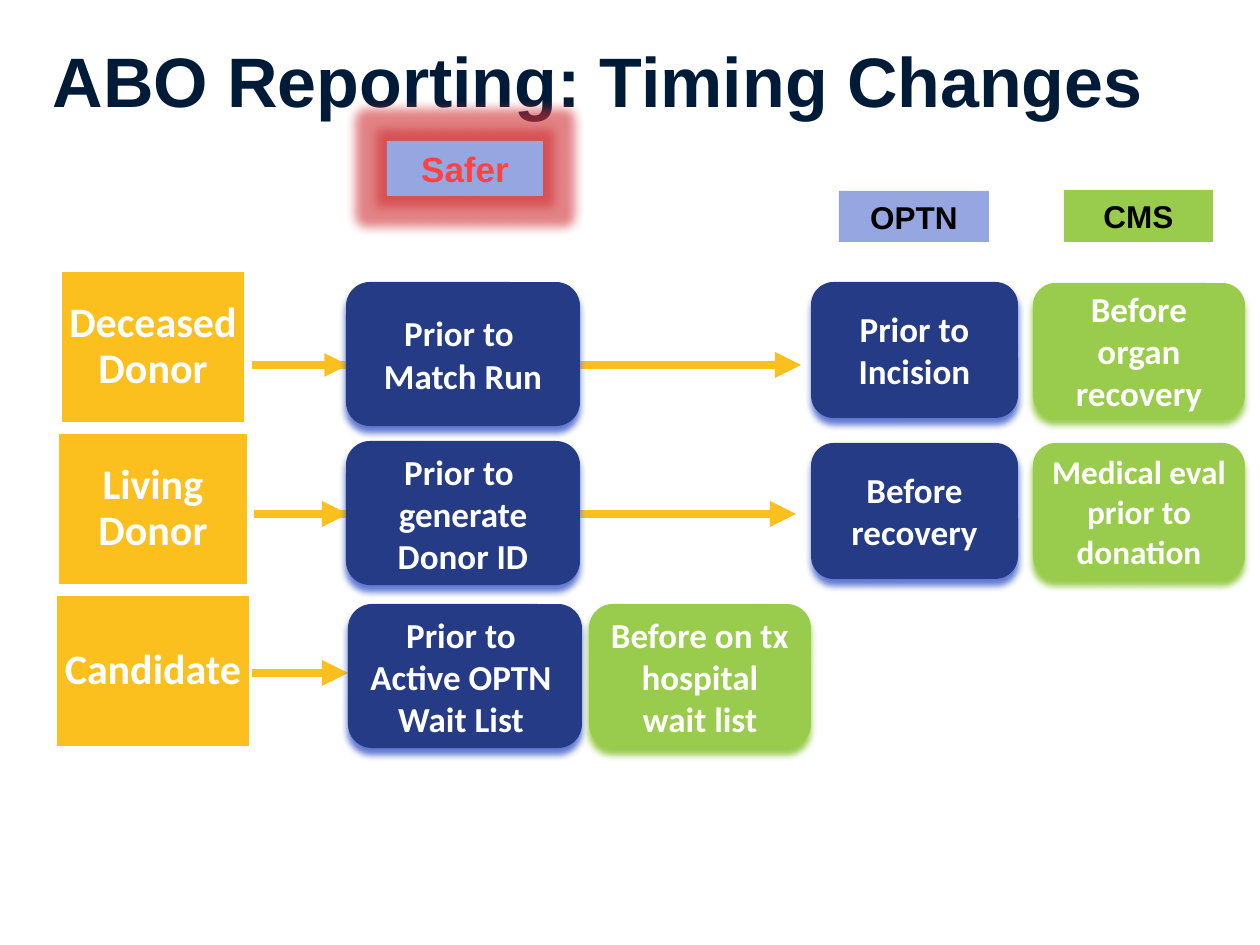
from lxml.etree import SubElement
from pptx import Presentation
from pptx.dml.color import RGBColor
from pptx.enum.shapes import MSO_CONNECTOR, MSO_SHAPE
from pptx.enum.text import MSO_ANCHOR, PP_ALIGN
from pptx.oxml.ns import qn
from pptx.util import Pt

SCALE = 914400 / 126  # EMU in one px
NAVY = RGBColor(0x00, 0x1B, 0x37)
BLUE = RGBColor(0x26, 0x3B, 0x86)
BLUE_SHADOW = RGBColor(0x61, 0x7A, 0xD2)
LIGHT_BLUE = RGBColor(0x96, 0xA6, 0xE1)
GREEN = RGBColor(0x99, 0xCC, 0x4C)
GOLD = RGBColor(0xFB, 0xC0, 0x1E)
RED = RGBColor(0xFD, 0x42, 0x44)
GLOW_RED = RGBColor(0xD0, 0x30, 0x34)
WHITE = RGBColor(0xFF, 0xFF, 0xFF)
BLACK = RGBColor(0x00, 0x00, 0x00)

ROW_TOP, ROW_PITCH = 270, 162
LABEL_CENTER, LABEL_HEIGHT = 153, 154


def px(length):
    return round(length * SCALE)


def write_text(shape, text, size, color, font="Calibri", align=PP_ALIGN.CENTER,
               line_spacing=None, inset=None):
    frame = shape.text_frame
    frame.word_wrap = True
    frame.vertical_anchor = MSO_ANCHOR.MIDDLE
    if inset is not None:
        frame.margin_left = frame.margin_right = px(inset)
    frame.text = text
    for paragraph in frame.paragraphs:
        paragraph.alignment = align
        paragraph.line_spacing = line_spacing
        paragraph.font.name = font
        paragraph.font.size = Pt(size)
        paragraph.font.bold = True
        paragraph.font.color.rgb = color


def add_effect(shape, name, color, alpha=100, **attributes):
    properties = shape._element.spPr
    effects = properties.find(qn("a:effectLst"))
    if effects is None:
        effects = SubElement(properties, qn("a:effectLst"))
    effect = SubElement(effects, qn("a:" + name),
                        {key: str(value) for key, value in attributes.items()})
    color_element = SubElement(effect, qn("a:srgbClr"), val=str(color))
    SubElement(color_element, qn("a:alpha"), val=str(alpha * 1000))


def add_box(slide, kind, box, fill, outline=None):
    shape = slide.shapes.add_shape(kind, *map(px, box))
    shape.shadow.inherit = False
    shape.fill.solid()
    shape.fill.fore_color.rgb = fill
    if outline is None:
        shape.line.fill.background()
    else:
        shape.line.color.rgb = outline
        shape.line.width = Pt(2.25)
    return shape


def add_arrow(slide, start, end, y, weight=5):
    arrow = slide.shapes.add_connector(MSO_CONNECTOR.STRAIGHT,
                                       px(start), px(y), px(end), px(y))
    arrow.line.color.rgb = GOLD
    arrow.line.width = Pt(weight)
    SubElement(arrow.line._get_or_add_ln(), qn("a:tailEnd"), type="triangle")
    SubElement(arrow._element.spPr, qn("a:effectLst"))


def add_title(slide, box, text):
    title = slide.shapes.title
    title.left, title.top, title.width, title.height = map(px, box)
    write_text(title, text, 40, NAVY, font="Arial", align=PP_ALIGN.LEFT)


def add_tag(slide, box, text, fill, size=18, color=BLACK, glow=None):
    tag = add_box(slide, MSO_SHAPE.RECTANGLE, box, fill)
    if glow:
        add_effect(tag, "glow", glow, alpha=60, rad=px(22))
    write_text(tag, text, size, color, font="Arial")


def add_step(slide, box, text, fill, size=20):
    step = add_box(slide, MSO_SHAPE.ROUNDED_RECTANGLE, box, fill)
    add_effect(step, "outerShdw", BLUE_SHADOW if fill == BLUE else GREEN,
               blurRad=Pt(4), dist=Pt(4), dir=5400000, algn="ctr", rotWithShape=0)
    write_text(step, text, size, WHITE)


def add_row(slide, top, label, label_width, arrow_offset, arrows, steps):
    """Place a label, its arrows and its steps; offsets count from the row top."""
    for arrow in arrows:
        add_arrow(slide, arrow[0], arrow[1], top + arrow_offset, *arrow[2:])
    label_box = (LABEL_CENTER - label_width / 2, top, label_width, LABEL_HEIGHT)
    shape = add_box(slide, MSO_SHAPE.RECTANGLE, label_box, GOLD, outline=WHITE)
    write_text(shape, label, 24, WHITE, line_spacing=0.9, inset=6)
    for (left, offset, width, height), *details in steps:
        add_step(slide, (left, top + offset, width, height), *details)


# Label, label width, arrow offset, arrows, steps
ROWS = [
    ("Deceased Donor", 186, 95, [(258, 801), (252, 348, 4.5)], [
        ((346, 12, 234, 144), "Prior to \vMatch Run", BLUE),
        ((811, 12, 207, 136), "Prior to Incision", BLUE),
        ((1033, 13, 212, 135), "Before organ recovery", GREEN)]),
    ("Living Donor", 192, 82, [(265, 796), (254, 348)], [
        ((346, 9, 234, 144), "Prior to \vgenerate Donor ID", BLUE),
        ((811, 11, 207, 136), "Before recovery", BLUE),
        ((1033, 11, 212, 136), "Medical eval prior to donation", GREEN, 19)]),
    ("Candidate", 195, 79, [(252, 348)], [
        ((348, 10, 234, 144), "Prior to \vActive OPTN \vWait List ", BLUE),
        ((589, 10, 222, 144), "Before on tx hospital wait list", GREEN)]),
]


def main():
    presentation = Presentation()
    presentation.slide_width, presentation.slide_height = px(1260), px(945)
    slide = presentation.slides.add_slide(presentation.slide_layouts[5])

    add_title(slide, (40, 21, 1205, 117), "ABO Reporting: Timing Changes")

    # Donor and candidate rows
    for index, row in enumerate(ROWS):
        add_row(slide, ROW_TOP + index * ROW_PITCH, *row)

    # Column tags
    add_tag(slide, (839, 191, 150, 51), "OPTN", LIGHT_BLUE)
    add_tag(slide, (1064, 190, 149, 52), "CMS", GREEN)
    add_tag(slide, (387, 141, 156, 55), "Safer", LIGHT_BLUE,
            size=20, color=RED, glow=GLOW_RED)

    presentation.save("out.pptx")


if __name__ == "__main__":
    main()
